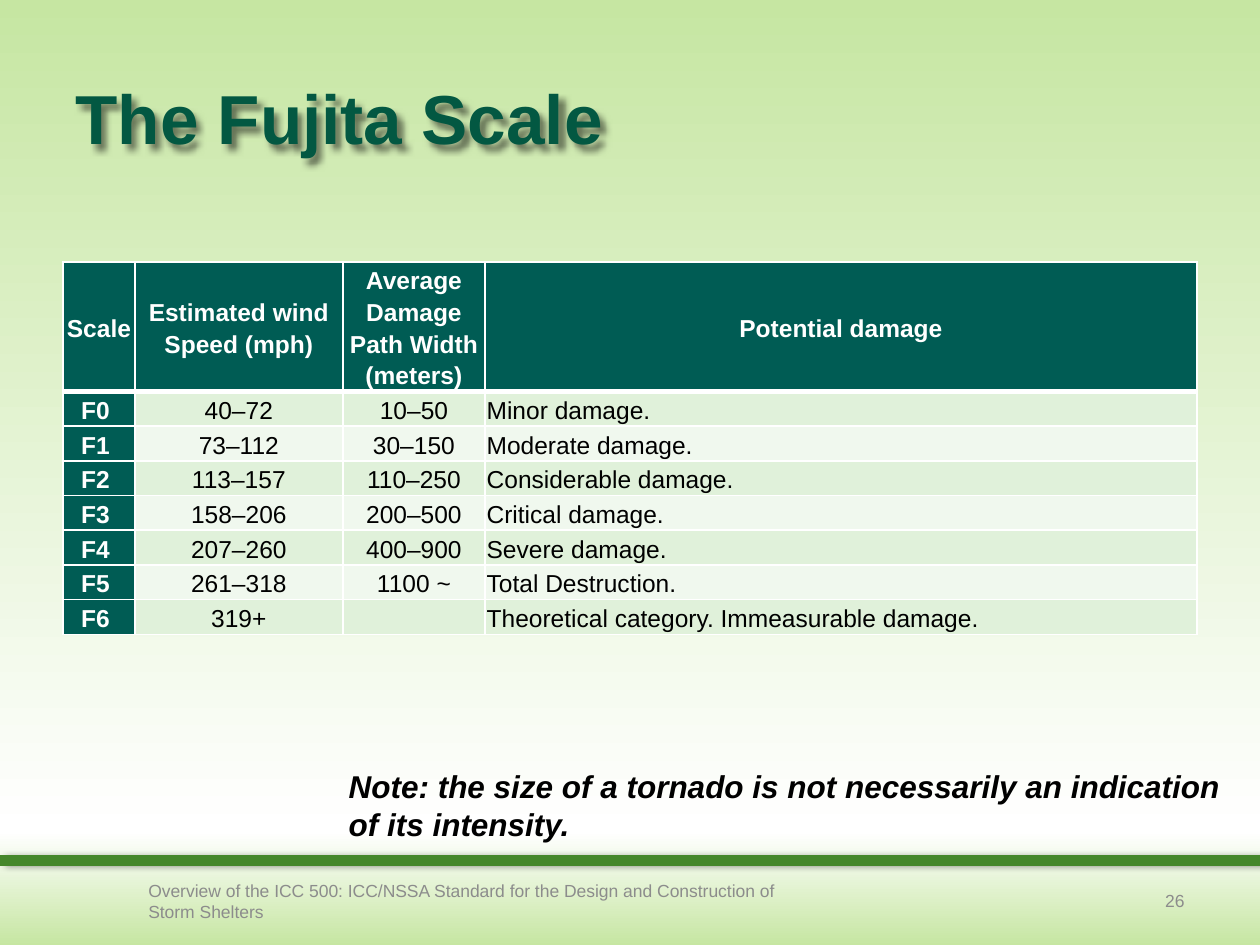
"""Build the Fujita Scale slide with its table, note and footer."""
from copy import deepcopy
from dataclasses import dataclass

from lxml import etree
from pptx import Presentation
from pptx.dml.color import RGBColor
from pptx.enum.shapes import MSO_CONNECTOR
from pptx.enum.text import MSO_ANCHOR, MSO_AUTO_SIZE, PP_ALIGN
from pptx.oxml.ns import qn
from pptx.util import Cm, Pt

LEFT, CENTER, RIGHT = PP_ALIGN.LEFT, PP_ALIGN.CENTER, PP_ALIGN.RIGHT
TOP, MIDDLE = MSO_ANCHOR.TOP, MSO_ANCHOR.MIDDLE
STRAIGHT = MSO_CONNECTOR.STRAIGHT
NO_AUTOFIT = MSO_AUTO_SIZE.NONE

FONT = "Arial"
WHITE, BLACK, GREY = "FFFFFF", "000000", "8C8C8C"
LIGHT_GREEN, TITLE_GREEN, RULE_GREEN = "C6E6A2", "035842", "45872B"
HEADER_TEAL, BANDS = "005C54", ("E0F1DA", "F0F8EE")
COLUMN_WIDTHS = (1.45, 4.19, 2.87, 14.35)
HEADER_HEIGHT, ROW_HEIGHT = 2.6, 0.69
CELL_MARGIN = 0.03


@dataclass(frozen=True)
class Category:
    scale: str
    wind_speed: str
    path_width: str
    damage: str


HEADINGS = Category("Scale", "Estimated wind\nSpeed (mph)",
                    "Average Damage Path Width (meters)", "Potential damage")
CATEGORIES = (
    Category("F0 ", "40–72", "10–50", "Minor damage."),
    Category("F1 ", "73–112", "30–150", "Moderate damage."),
    Category("F2 ", "113–157", "110–250", "Considerable damage."),
    Category("F3 ", "158–206", "200–500", "Critical damage."),
    Category("F4 ", "207–260", "400–900", "Severe damage."),
    Category("F5 ", "261–318", "1100 ~", "Total Destruction."),
    Category("F6 ", "319+", "", "Theoretical category. Immeasurable damage."),
)


@dataclass(frozen=True)
class Caption:
    text: str
    left: float
    top: float
    width: float
    height: float
    size: float
    color: str
    align: PP_ALIGN = LEFT
    anchor: MSO_ANCHOR = MIDDLE
    emphasis: bool = False


CAPTIONS = (
    Caption("Overview of the ICC 500: ICC/NSSA Standard for the Design and "
            "Construction of Storm Shelters", 2.74, 17.65, 13.77, 1.02, 10, GREY),
    Caption("26", 18.21, 17.65, 5.92, 1.02, 10, GREY, RIGHT),
    Caption("Note: the size of a tornado is not necessarily an indication "
            "of its intensity.", 6.78, 15.34, 18.21, 1.8, 18, BLACK,
            anchor=TOP, emphasis=True),
)


def rgb(color: str) -> RGBColor:
    return RGBColor.from_string(color)


def write(frame, text: str, *, size: float, color: str, bold: bool = False,
          italic: bool = False, align: PP_ALIGN = LEFT, spacing: float = 1.0) -> None:
    for index, line in enumerate(text.split("\n")):
        paragraph = frame.add_paragraph() if index else frame.paragraphs[0]
        paragraph.alignment = align
        paragraph.line_spacing = spacing
        if not line:
            etree.SubElement(paragraph._p, qn("a:endParaRPr"), sz=str(int(size * 100)))
            continue
        run = paragraph.add_run()
        run.text = line
        font = run.font
        font.name, font.size, font.bold, font.italic = FONT, Pt(size), bold, italic
        font.color.rgb = rgb(color)


def add_shadow(shape, blur: float, distance: float, angle: int, opacity: int) -> None:
    effects = etree.SubElement(shape._element.spPr, qn("a:effectLst"))
    shadow = etree.SubElement(effects, qn("a:outerShdw"), blurRad=str(Pt(blur)),
                              dist=str(Pt(distance)), dir=str(angle * 60000),
                              algn="tl", rotWithShape="0")
    tone = etree.SubElement(shadow, qn("a:srgbClr"), val=BLACK)
    etree.SubElement(tone, qn("a:alpha"), val=str(opacity * 1000))


def paint_background(slide) -> None:
    fill = slide.background.fill
    fill.gradient()
    fill.gradient_angle = 90
    stops = slide.element.find(".//" + qn("a:gsLst"))
    stops.insert(1, deepcopy(stops[0]))
    colors = ((0, LIGHT_GREEN), (0.12, WHITE), (1, LIGHT_GREEN))
    for stop, (position, color) in zip(fill.gradient_stops, colors):
        stop.position = position
        stop.color.rgb = rgb(color)


def add_title(slide) -> None:
    title = slide.shapes.title
    title.left, title.top, title.width, title.height = Cm(1.27), Cm(0.76), Cm(22.86), Cm(3.18)
    title.text_frame.vertical_anchor = MIDDLE
    title.text_frame.auto_size = NO_AUTOFIT
    write(title.text_frame, "The Fujita Scale", size=39.6, color=TITLE_GREEN, bold=True)
    add_shadow(title, 4, 4, 45, 50)


def add_footer_rule(slide) -> None:
    rule = slide.shapes.add_connector(STRAIGHT, 0, Cm(17.35), Cm(25.4), Cm(17.35))
    rule.line.color.rgb = rgb(RULE_GREEN)
    rule.line.width = Pt(6)
    add_shadow(rule, 4, 3, 0, 40)


def add_borders(cell, top: float, bottom: float) -> None:
    properties = cell._tc.get_or_add_tcPr()
    widths = {"lnL": 1, "lnR": 1, "lnT": top, "lnB": bottom}
    for index, (side, width) in enumerate(widths.items()):
        border = etree.Element(qn("a:" + side), w=str(Pt(width)))
        paint = etree.SubElement(border, qn("a:solidFill"))
        etree.SubElement(paint, qn("a:srgbClr"), val=WHITE)
        properties.insert(index, border)


def fill_row(table, row: int, category: Category) -> None:
    texts = (category.scale, category.wind_speed, category.path_width, category.damage)
    for column, text in enumerate(texts):
        cell = table.cell(row, column)
        heading = row == 0 or column == 0
        cell.margin_left = cell.margin_right = Cm(CELL_MARGIN)
        cell.margin_top = cell.margin_bottom = Cm(CELL_MARGIN)
        cell.vertical_anchor = MIDDLE
        cell.fill.solid()
        cell.fill.fore_color.rgb = rgb(HEADER_TEAL if heading else BANDS[(row - 1) % 2])
        add_borders(cell, top=3 if row == 1 else 1, bottom=3 if row == 0 else 1)
        write(cell.text_frame, text, size=14, color=WHITE if heading else BLACK,
              bold=heading, align=LEFT if row and column == 3 else CENTER, spacing=1.15)


def add_scale_table(slide) -> None:
    rows = (HEADINGS, *CATEGORIES)
    height = HEADER_HEIGHT + ROW_HEIGHT * len(CATEGORIES)
    table = slide.shapes.add_table(len(rows), len(COLUMN_WIDTHS), Cm(1.27), Cm(5.28),
                                   Cm(sum(COLUMN_WIDTHS)), Cm(height)).table
    for column, width in zip(table.columns, COLUMN_WIDTHS):
        column.width = Cm(width)
    for index, category in enumerate(rows):
        table.rows[index].height = Cm(ROW_HEIGHT if index else HEADER_HEIGHT)
        fill_row(table, index, category)


def add_caption(slide, caption: Caption) -> None:
    box = slide.shapes.add_textbox(Cm(caption.left), Cm(caption.top),
                                   Cm(caption.width), Cm(caption.height))
    box.text_frame.word_wrap = True
    box.text_frame.vertical_anchor = caption.anchor
    write(box.text_frame, caption.text, size=caption.size, color=caption.color,
          bold=caption.emphasis, italic=caption.emphasis, align=caption.align)


def main() -> None:
    deck = Presentation()
    deck.slide_width, deck.slide_height = Cm(25.4), Cm(19.05)
    slide = deck.slides.add_slide(deck.slide_layouts[5])
    paint_background(slide)
    add_footer_rule(slide)
    add_title(slide)
    add_scale_table(slide)
    for caption in CAPTIONS:
        add_caption(slide, caption)
    deck.save("out.pptx")


if __name__ == "__main__":
    main()
